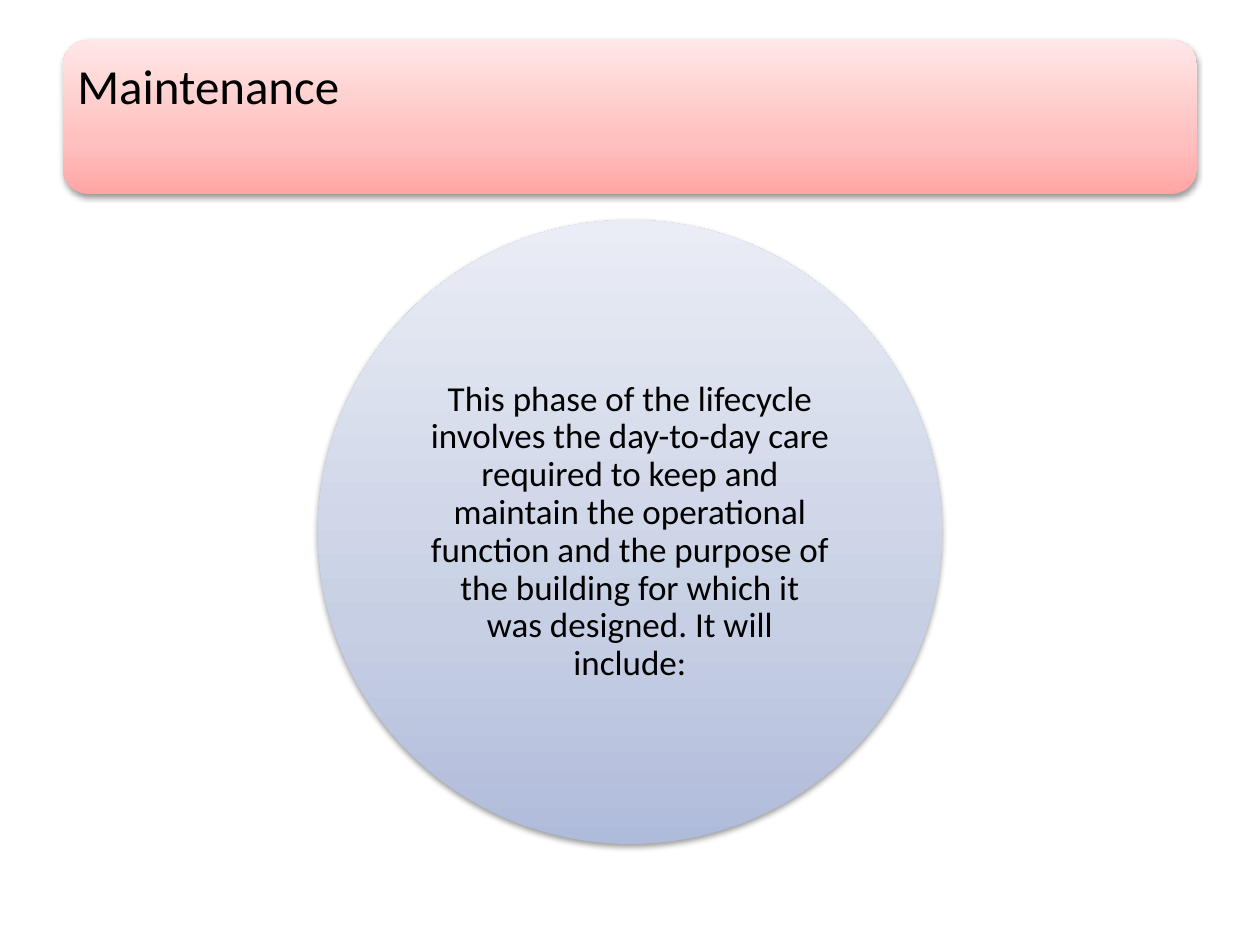
from copy import deepcopy
from dataclasses import dataclass

from lxml import etree
from pptx import Presentation
from pptx import util as u
from pptx.dml.color import RGBColor
from pptx.enum import shapes, text
from pptx.oxml.ns import qn

SCALE = 914400 / 126
COLORS = {
    "text": "000000",
    "shadow": "000000",
    "red_dark": "FFA6A5",
    "red_mid": "FFC0BF",
    "red_light": "FFE7E7",
    "blue_dark": "AFBBDA",
    "blue_mid": "C7CFE4",
    "blue_light": "EAEDF5",
}
STOPS = (0, 0.35, 1)


@dataclass
class Panel:
    kind: shapes.MSO_SHAPE
    box: tuple[int, int, int, int]
    hue: str
    words: str
    size: int
    align: text.PP_ALIGN
    anchor: text.MSO_ANCHOR
    insets: tuple[int, int, int, int]


PANELS = [
    Panel(shapes.MSO_SHAPE.ROUNDED_RECTANGLE, (63, 40, 1134, 154), "red",
          "Maintenance", 28, text.PP_ALIGN.LEFT, text.MSO_ANCHOR.TOP,
          (7, 15, 7, 15)),
    Panel(shapes.MSO_SHAPE.OVAL, (318, 220, 624, 624), "blue",
          "This phase of the lifecycle involves the day-to-day care required "
          "to keep and maintain the operational function and the purpose of "
          "the building for which it was designed. It will include:",
          20, text.PP_ALIGN.CENTER, text.MSO_ANCHOR.MIDDLE,
          (20, 20, 20, 20)),
]


def px(n: int) -> u.Emu:
    return u.Emu(round(n * SCALE))


def fill_gradient(sp, hue: str) -> None:
    sp.fill.gradient()
    sp.fill.gradient_angle = 90
    gs_list = sp._element.spPr.find(".//" + qn("a:gsLst"))
    gs_list.append(deepcopy(gs_list[-1]))
    shades = ("dark", "mid", "light")
    for stop, position, shade in zip(sp.fill.gradient_stops, STOPS, shades):
        stop.position = position
        stop.color.rgb = RGBColor.from_string(COLORS[f"{hue}_{shade}"])


def add_shadow(sp) -> None:
    sp.shadow.inherit = False
    effects = sp._element.spPr.find(qn("a:effectLst"))
    shadow = etree.SubElement(effects, qn("a:outerShdw"), blurRad="40000",
                              dist="20000", dir="5400000", rotWithShape="0")
    color = etree.SubElement(shadow, qn("a:srgbClr"), val=COLORS["shadow"])
    etree.SubElement(color, qn("a:alpha"), val="38000")


def add_panel(s, panel: Panel) -> None:
    sp = s.shapes.add_shape(panel.kind, *map(px, panel.box))
    fill_gradient(sp, panel.hue)
    sp.line.fill.background()
    add_shadow(sp)
    tf = sp.text_frame
    tf.word_wrap = True
    tf.vertical_anchor = panel.anchor
    tf.margin_left, tf.margin_top, tf.margin_right, tf.margin_bottom = map(
        px, panel.insets)
    tf.text = panel.words
    p = tf.paragraphs[0]
    p.alignment = panel.align
    p.line_spacing = 0.9
    r = p.runs[0]
    r.font.name = "Calibri"
    r.font.size = u.Pt(panel.size)
    r.font.color.rgb = RGBColor.from_string(COLORS["text"])


def main() -> None:
    prs = Presentation()
    prs.slide_width, prs.slide_height = px(1260), px(945)
    s = prs.slides.add_slide(prs.slide_layouts[6])
    for panel in PANELS:
        add_panel(s, panel)
    prs.save("out.pptx")


if __name__ == "__main__":
    main()
